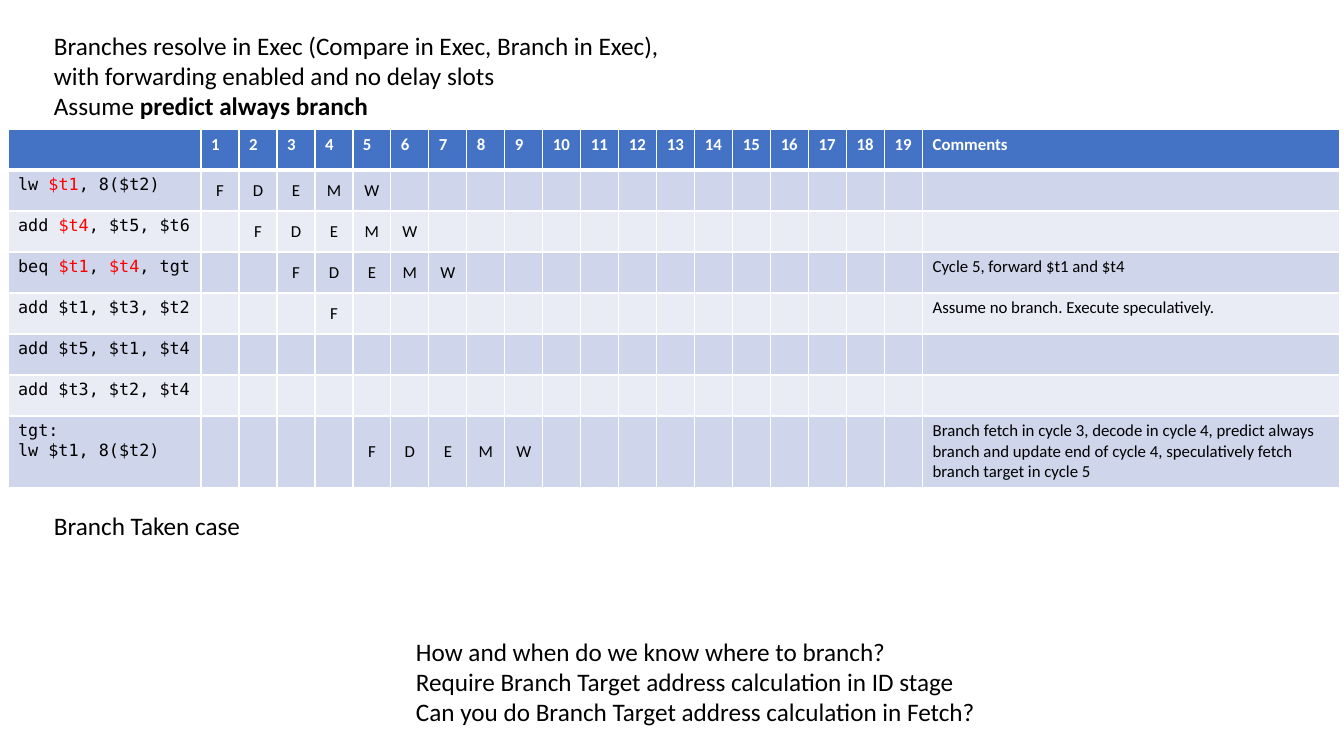
from lxml import etree
from pptx import Presentation
from pptx.dml.color import RGBColor
from pptx.enum.text import MSO_ANCHOR, MSO_AUTO_SIZE, PP_ALIGN
from pptx.oxml.ns import qn
from pptx.util import Pt

MIDDLE = MSO_ANCHOR.MIDDLE
CENTER = PP_ALIGN.CENTER
FIT_SHAPE = MSO_AUTO_SIZE.SHAPE_TO_FIT_TEXT
PX = 914400 / 100.8
SANS, MONO = "Calibri", "DejaVu Sans Mono"
BLACK, WHITE, RED = "000000", "FFFFFF", "FF0000"
HEADER_FILL, BANDS = "4472C4", ("E9EBF5", "CFD5EA")
CYCLES = 19
COMMENT_COLUMN = CYCLES + 1
ROW_HEIGHT, LAST_ROW_HEIGHT = 41, 71


def px(*lengths):
    return [round(length * PX) for length in lengths]


def write(para, text, size=12, font=SANS, color=BLACK, bold=False, accent=None):
    """Fill a paragraph; parts between bars are emphasised, \\v breaks a line."""
    for part_index, part in enumerate(text.split("|")):
        marked = part_index % 2 == 1
        for line_index, line in enumerate(part.split("\v")):
            if line_index:
                para.add_line_break()
            span = para.add_run()
            span.text = line
            span.font.size = Pt(size)
            span.font.name = font
            span.font.bold = bold or (marked and accent is None)
            span.font.color.rgb = RGBColor.from_string(accent if marked and accent else color)
    for line_break in para._p.findall(qn("a:br")):
        etree.SubElement(line_break, qn("a:rPr"), sz=str(size * 100))


# instruction, pipeline stages, cycle of the first stage, comment
instructions = [
    ("lw |$t1|, 8($t2)", "FDEMW", 1, ""),
    ("add |$t4|, $t5, $t6", "FDEMW", 2, ""),
    ("beq |$t1|, |$t4|, tgt", "FDEMW", 3, "Cycle 5, forward $t1 and $t4"),
    ("add $t1, $t3, $t2", "F", 4, "Assume no branch. Execute speculatively."),
    ("add $t5, $t1, $t4", "", 5, ""),
    ("add $t3, $t2, $t4", "", 6, ""),
    ("tgt: \vlw $t1, 8($t2)", "FDEMW", 5,
     "Branch fetch in cycle 3, decode in cycle 4, predict always branch and update "
     "end of cycle 4, speculatively fetch branch target in cycle 5"),
]
notes = [
    (44, 25, 638, 102, [
        "Branches resolve in Exec (Compare in Exec, Branch in Exec), \v"
        "with forwarding enabled and no delay slots\v"
        "Assume |predict always branch|"]),
    (44, 505, 209, 40, ["Branch Taken case"]),
    (406, 631, 587, 102, [
        "How and when do we know where to branch?",
        "Require Branch Target address calculation in ID stage",
        "Can you do Branch Target address calculation in Fetch?"]),
]

deck = Presentation()
deck.slide_width, deck.slide_height = px(1344, 756)
page = deck.slides.add_slide(deck.slide_layouts[6])

# Pipeline table
widths = [193] + [38] * CYCLES + [417]
heights = [ROW_HEIGHT] * len(instructions) + [LAST_ROW_HEIGHT]
table = page.shapes.add_table(
    len(heights), len(widths), *px(8, 129, sum(widths), sum(heights))).table
for column, width in zip(table.columns, px(*widths)):
    column.width = width
for row, height in zip(table.rows, px(*heights)):
    row.height = height

for row_index, row in enumerate(table.rows):
    for cell in row.cells:
        properties = cell._tc.get_or_add_tcPr()
        for side in "LRTB":
            thick = (row_index, side) in ((0, "B"), (1, "T"))
            border = etree.SubElement(
                properties, qn(f"a:ln{side}"), w=str(Pt(3 if thick else 1)))
            line_fill = etree.SubElement(border, qn("a:solidFill"))
            etree.SubElement(line_fill, qn("a:srgbClr"), val=WHITE)
        cell.fill.solid()
        fill = BANDS[row_index % 2] if row_index else HEADER_FILL
        cell.fill.fore_color.rgb = RGBColor.from_string(fill)

headings = [str(cycle) for cycle in range(1, CYCLES + 1)] + ["Comments"]
for column_index, heading in enumerate(headings, 1):
    write(table.cell(0, column_index).text_frame.paragraphs[0], heading,
          color=WHITE, bold=True)

for row_index, (code, stages, first_cycle, comment) in enumerate(instructions, 1):
    write(table.cell(row_index, 0).text_frame.paragraphs[0], code, font=MONO, accent=RED)
    for cycle, stage in enumerate(stages, first_cycle):
        cell = table.cell(row_index, cycle)
        cell.vertical_anchor = MIDDLE
        para = cell.text_frame.paragraphs[0]
        para.alignment = CENTER
        write(para, stage)
    if comment:
        write(table.cell(row_index, COMMENT_COLUMN).text_frame.paragraphs[0], comment)

# Notes around the table
for left, top, width, height, lines in notes:
    frame = page.shapes.add_textbox(*px(left, top, width, height)).text_frame
    frame.word_wrap = False
    frame.auto_size = FIT_SHAPE
    for line_index, line in enumerate(lines):
        para = frame.add_paragraph() if line_index else frame.paragraphs[0]
        write(para, line, size=18)

deck.save("out.pptx")
